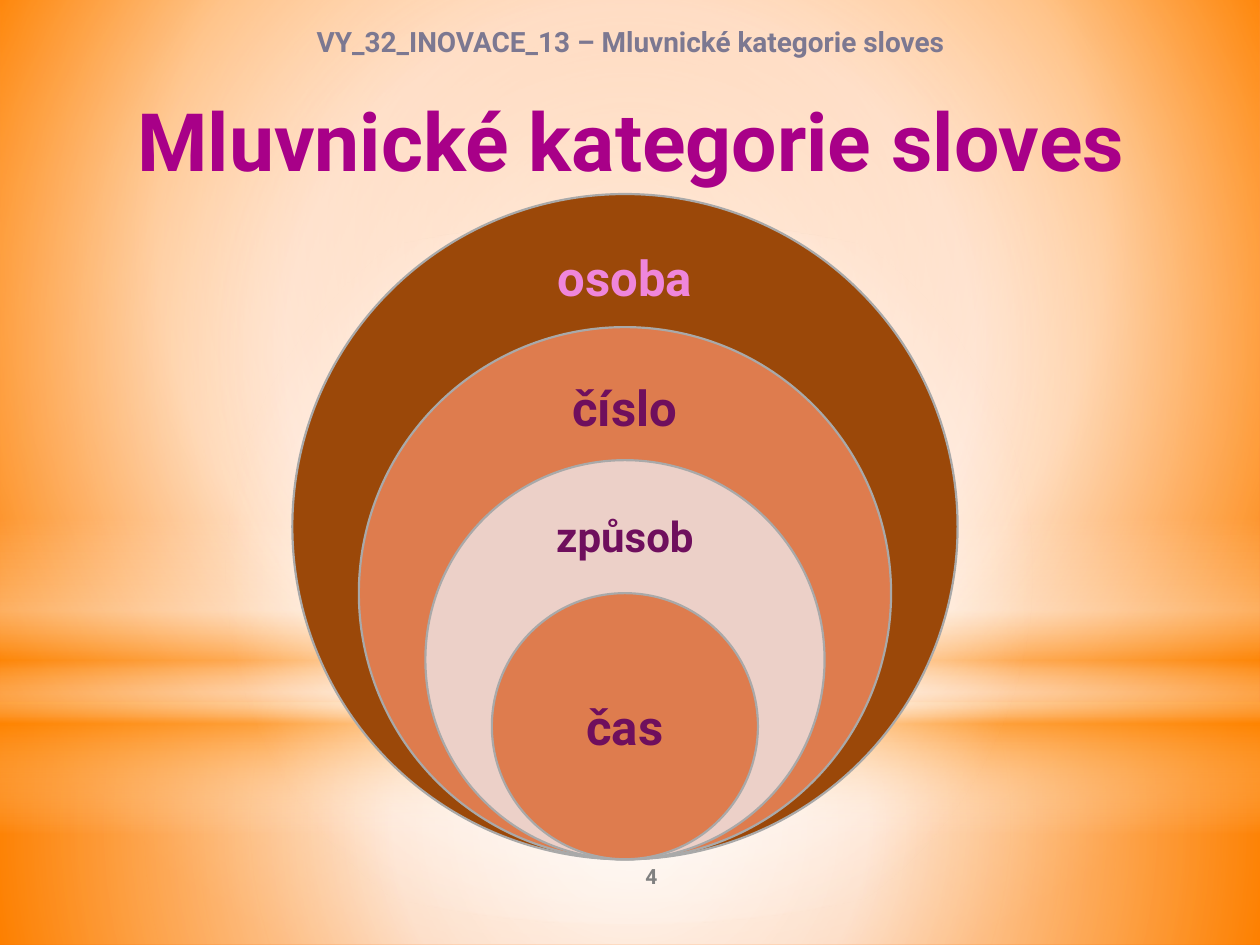
from pptx import Presentation
from pptx.dml.color import RGBColor
from pptx.enum.shapes import MSO_SHAPE
from pptx.enum.text import MSO_ANCHOR, MSO_AUTO_SIZE, PP_ALIGN
from pptx.oxml import parse_xml
from pptx.oxml.ns import nsdecls, qn
from pptx.util import Inches, Pt

HUES = {
    "white": "FFFFFF", "glow": "FF8600", "top": "FF8221", "peach": "FFCAA7",
    "deep": "F86900", "brown": "9B4809", "rust": "DE7C4E", "blush": "ECD0C8",
    "edge": "A9A9A9", "pink": "EF86DB", "plum": "6F0F5D", "slate": "7C7891",
    "violet": "A80088", "gray": "808080",
}


def blend(fill, root, stops, rect):
    fill.solid()
    old = next(root.iter(qn("a:solidFill")))
    marks = "".join(
        f'<a:gs pos="{pos * 1000}"><a:srgbClr val="{HUES[hue]}">'
        f'<a:alpha val="{alpha * 1000}"/></a:srgbClr></a:gs>'
        for pos, hue, alpha in stops)
    shade = '<a:lin ang="5400000" scaled="0"/>'
    if rect:
        sides = " ".join(f'{side}="{part * 1000}"' for side, part in zip("ltrb", rect))
        shade = f'<a:path path="circle"><a:fillToRect {sides}/></a:path>'
    old.getparent().replace(old, parse_xml(
        f'<a:gradFill {nsdecls("a")} rotWithShape="1">'
        f"<a:gsLst>{marks}</a:gsLst>{shade}</a:gradFill>"))


def write(para, text, size, hue):
    para.alignment = PP_ALIGN.CENTER
    run = para.add_run()
    run.text = text
    run.font.name = "Roboto"
    run.font.size = Pt(size)
    run.font.bold = True
    run.font.color.rgb = RGBColor.from_string(HUES[hue])


deck = Presentation()
deck.slide_width = Inches(10)
deck.slide_height = Inches(7.5)
slide = deck.slides.add_slide(deck.slide_layouts[5])
shapes = slide.shapes

blend(slide.background.fill, slide.element,
      [(0, "top", 100), (60, "peach", 100), (100, "deep", 100)], (20, 10, 20, 60))

MID = (50, 50, 50, 50)
veils = [
    (MSO_SHAPE.RECTANGLE, 5.58, 1.92, MID,
     [(0, "white", 91), (37, "white", 76), (100, "glow", 79)]),
    (MSO_SHAPE.RECTANGLE, 0, 5.58, MID,
     [(0, "white", 89), (48, "white", 62), (100, "glow", 79)]),
    (MSO_SHAPE.RECTANGLE, 4.12, 2.5, None,
     [(0, "white", 0), (29, "white", 30), (45, "glow", 40),
      (55, "white", 26), (65, "glow", 60), (100, "white", 0)]),
    (MSO_SHAPE.OVAL, 1.75, 5.58, MID, [(0, "white", 100), (56, "white", 0)]),
]
for kind, top, high, rect, stops in veils:
    veil = shapes.add_shape(kind, 0, Inches(top), Inches(10), Inches(high))
    veil.shadow.inherit = False
    veil.line.fill.background()
    blend(veil.fill, veil.element, stops, rect)

title = shapes.title
shapes.element.append(title.element)
title.left, title.top = Inches(0.2), Inches(0.13)
title.width, title.height = Inches(9.61), Inches(1.42)
frame = title.text_frame
frame.auto_size = MSO_AUTO_SIZE.NONE
frame.vertical_anchor = MSO_ANCHOR.MIDDLE
write(frame.paragraphs[0], "VY_32_INOVACE_13 – Mluvnické kategorie sloves", 16, "slate")
head = frame.add_paragraph()
head.space_before = Pt(19)
write(head, "Mluvnické kategorie sloves", 46, "violet")

FULL, MIDDLE, BASE = 5.28, 4.96, 6.82
rings = [(1, "brown"), (0.8, "rust"), (0.6, "blush"), (0.4, "rust")]
for scale, hue in rings:
    size = FULL * scale
    ring = shapes.add_shape(MSO_SHAPE.OVAL, Inches(MIDDLE - size / 2),
                            Inches(BASE - size), Inches(size), Inches(size))
    ring.shadow.inherit = False
    ring.fill.solid()
    ring.fill.fore_color.rgb = RGBColor.from_string(HUES[hue])
    ring.line.color.rgb = RGBColor.from_string(HUES["edge"])
    ring.line.width = Pt(1.25)

labels = [
    ("osoba", MIDDLE, 2.2, 28, "pink"), ("číslo", MIDDLE, 3.23, 28, "plum"),
    ("způsob", MIDDLE, 4.25, 24, "plum"), ("čas", MIDDLE, 5.76, 28, "plum"),
    ("4", 5.17, 6.95, 12, "gray"),
]
for text, x, y, size, hue in labels:
    box = shapes.add_textbox(Inches(x - 1), Inches(y - 0.3), Inches(2), Inches(0.6))
    frame = box.text_frame
    frame.word_wrap = True
    frame.vertical_anchor = MSO_ANCHOR.MIDDLE
    write(frame.paragraphs[0], text, size, hue)

deck.save("out.pptx")
